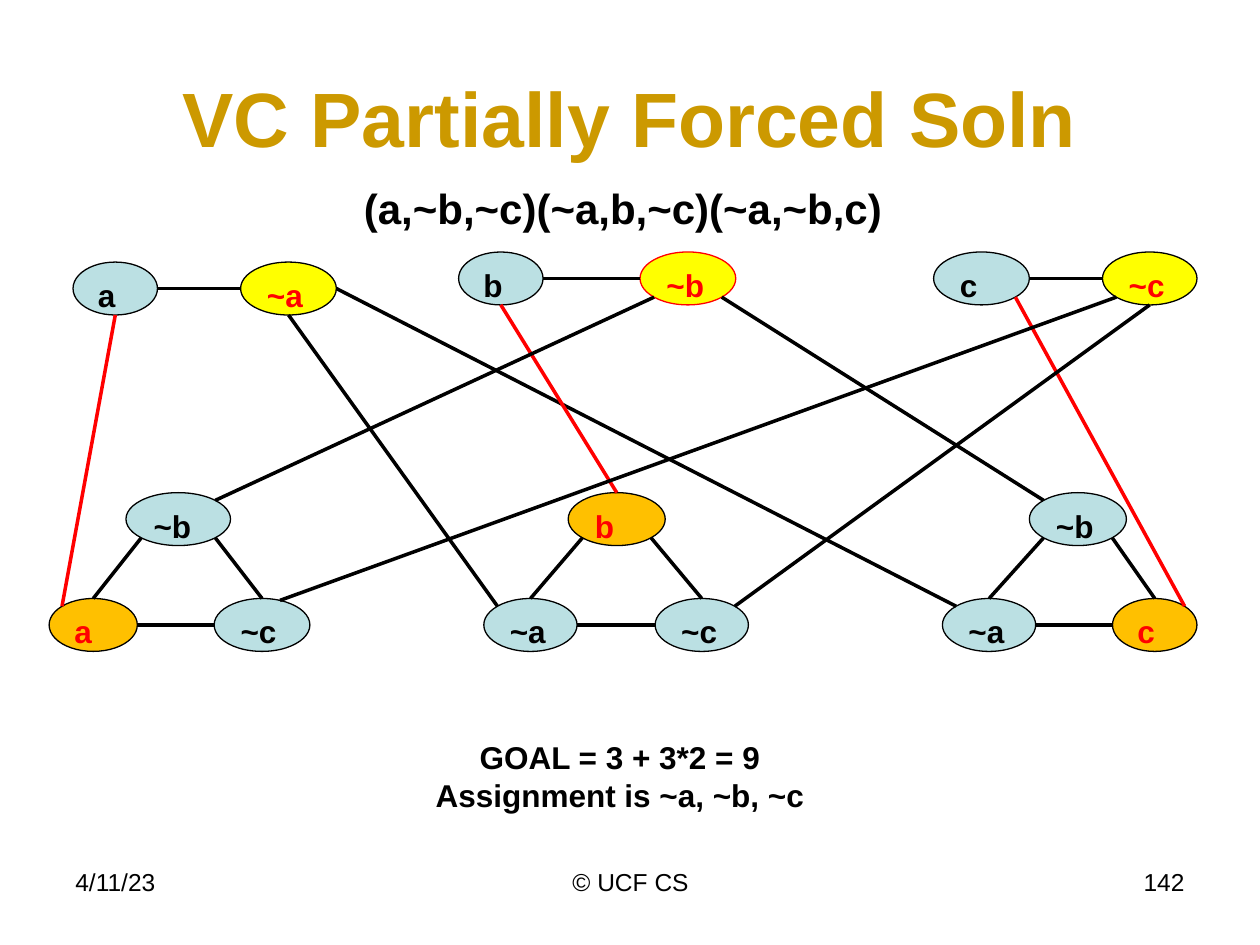
import math
from dataclasses import dataclass

import pptx
import pptx.dml.color
import pptx.enum.shapes
import pptx.enum.text
import pptx.oxml.ns
import pptx.util
from lxml import etree
from pptx.util import Inches

ALIGN = pptx.enum.text.PP_ALIGN
ANCHOR = pptx.enum.text.MSO_ANCHOR


@dataclass(frozen=True)
class Theme:
    font: str = "Arial"
    title_color: str = "CC9900"
    black: str = "000000"
    red: str = "FF0000"
    blue: str = "BBE0E3"
    yellow: str = "FFFF00"
    orange: str = "FFC000"
    title_size: int = 44
    formula_size: int = 24
    body_size: int = 18
    footer_size: int = 14
    outline: float = 0.75
    edge: float = 2


THEME = Theme()
NODE_HEIGHT = 0.42
CLAUSE_TOP, CLAUSE_BASE = 3.91, 4.75

# name: (label, left, top, width, fill, text color, outline color)
PLAIN = (THEME.blue, THEME.black, THEME.black)
ASSIGNED = (THEME.yellow, THEME.red, THEME.black)
FORCED = (THEME.orange, THEME.red, THEME.black)
NODES = {
    "a": ("a", 0.58, 2.08, 0.67, *PLAIN),
    "not a": ("~a", 1.91, 2.08, 0.76, *ASSIGNED),
    "b": ("b", 3.64, 2, 0.67, *PLAIN),
    "not b": ("~b", 5.08, 2, 0.76, THEME.yellow, THEME.red, THEME.red),
    "c": ("c", 7.41, 2, 0.76, *PLAIN),
    "not c": ("~c", 8.75, 2, 0.75, *ASSIGNED),
    "1 top": ("~b", 1, CLAUSE_TOP, 0.83, *PLAIN),
    "1 left": ("a", 0.39, CLAUSE_BASE, 0.7, *FORCED),
    "1 right": ("~c", 1.7, CLAUSE_BASE, 0.76, *PLAIN),
    "2 top": ("b", 4.51, CLAUSE_TOP, 0.77, *FORCED),
    "2 left": ("~a", 3.84, CLAUSE_BASE, 0.74, *PLAIN),
    "2 right": ("~c", 5.2, CLAUSE_BASE, 0.74, *PLAIN),
    "3 top": ("~b", 8.17, CLAUSE_TOP, 0.77, *PLAIN),
    "3 left": ("~a", 7.48, CLAUSE_BASE, 0.74, *PLAIN),
    "3 right": ("c", 8.83, CLAUSE_BASE, 0.67, *FORCED),
}

# Edges from a literal to a clause: node, site, node, site, color
LITERAL_EDGES = [
    ("a", "S", "1 left", "NW", THEME.red),
    ("not a", "S", "2 left", "NW", THEME.black),
    ("not a", "E", "3 left", "NW", THEME.black),
    ("b", "S", "2 top", "N", THEME.red),
    ("c", "SE", "3 right", "NE", THEME.red),
    ("not b", "SW", "1 top", "NE", THEME.black),
    ("not b", "SE", "3 top", "NW", THEME.black),
    ("not c", "S", "2 right", "NE", THEME.black),
    ("not c", "SW", "1 right", "NNE", THEME.black),
]
SITE_ANGLES = {"E": 0, "SE": 45, "S": 90, "SW": 135, "W": 180, "NW": 225,
               "N": 270, "NNE": 292, "NE": 315}


def rgb(color):
    return pptx.dml.color.RGBColor.from_string(color)


def format_text(text_frame, size, color, bold=True, align=ALIGN.LEFT,
                anchor=ANCHOR.TOP):
    text_frame.word_wrap = True
    text_frame.vertical_anchor = anchor
    for paragraph in text_frame.paragraphs:
        paragraph.alignment = align
        for run in paragraph.runs:
            run.font.name = THEME.font
            run.font.size = pptx.util.Pt(size)
            run.font.bold = bold
            run.font.color.rgb = rgb(color)


def add_title(slide, text):
    title = slide.shapes.title
    title.left, title.top = Inches(0.5), Inches(0.3)
    title.width, title.height = Inches(9), Inches(1.25)
    title.text_frame.text = text
    format_text(title.text_frame, THEME.title_size, THEME.title_color,
                align=ALIGN.CENTER, anchor=ANCHOR.MIDDLE)


def add_text(slide, text, left, top, width, height, size, **style):
    box = slide.shapes.add_textbox(Inches(left), Inches(top),
                                   Inches(width), Inches(height))
    box.text_frame.text = text
    format_text(box.text_frame, size, THEME.black, **style)


def add_node(slide, label, left, top, width, fill, text_color, outline):
    shape = slide.shapes.add_shape(
        pptx.enum.shapes.MSO_SHAPE.OVAL, Inches(left), Inches(top),
        Inches(width), Inches(NODE_HEIGHT))
    shape.shadow.inherit = False
    shape.fill.solid()
    shape.fill.fore_color.rgb = rgb(fill)
    shape.line.color.rgb = rgb(outline)
    shape.line.width = pptx.util.Pt(THEME.outline)
    shape.text_frame.text = label
    format_text(shape.text_frame, THEME.body_size, text_color)


def site_point(name, site):
    """Return the point on a node's outline at a compass site."""
    _, left, top, width, *_ = NODES[name]
    angle = math.radians(SITE_ANGLES[site])
    return (Inches(left + width / 2 * (1 + math.cos(angle))),
            Inches(top + NODE_HEIGHT / 2 * (1 + math.sin(angle))))


def add_edge(slide, start, start_site, end, end_site, color=THEME.black):
    connector = slide.shapes.add_connector(
        pptx.enum.shapes.MSO_CONNECTOR.STRAIGHT,
        *site_point(start, start_site), *site_point(end, end_site))
    connector.line.color.rgb = rgb(color)
    connector.line.width = pptx.util.Pt(THEME.edge)
    properties = connector.element.spPr
    etree.SubElement(properties, pptx.oxml.ns.qn("a:effectLst"))


def add_graph(slide):
    for node in NODES.values():
        add_node(slide, *node)
    for variable in "abc":
        add_edge(slide, variable, "E", f"not {variable}", "W")
    for clause in "123":
        top, left, right = (f"{clause} {corner}"
                            for corner in ("top", "left", "right"))
        add_edge(slide, left, "N", top, "SW")
        add_edge(slide, right, "N", top, "SE")
        add_edge(slide, left, "E", right, "W")
    for edge in LITERAL_EDGES:
        add_edge(slide, *edge)


def add_footer(slide):
    for text, left, width, align in (
            ("4/11/23", 0.5, 2.33, ALIGN.LEFT),
            ("© UCF CS", 3.42, 3.17, ALIGN.CENTER),
            ("142", 7.17, 2.33, ALIGN.RIGHT)):
        add_text(slide, text, left, 6.83, width, 0.52, THEME.footer_size,
                 bold=False, align=align)


def main():
    presentation = pptx.Presentation()
    presentation.slide_width = Inches(10)
    presentation.slide_height = Inches(7.5)
    slide = presentation.slides.add_slide(presentation.slide_layouts[5])
    add_title(slide, "VC Partially Forced Soln")
    add_footer(slide)
    add_graph(slide)
    add_text(slide, "(a,~b,~c)(~a,b,~c)(~a,~b,c)", 2.79, 1.4, 4.43, 0.5,
             THEME.formula_size)
    add_text(slide, "GOAL = 3 + 3*2 = 9\nAssignment is ~a, ~b, ~c",
             1.42, 5.81, 7, 0.71, THEME.body_size, align=ALIGN.CENTER)
    presentation.save("out.pptx")


if __name__ == "__main__":
    main()
